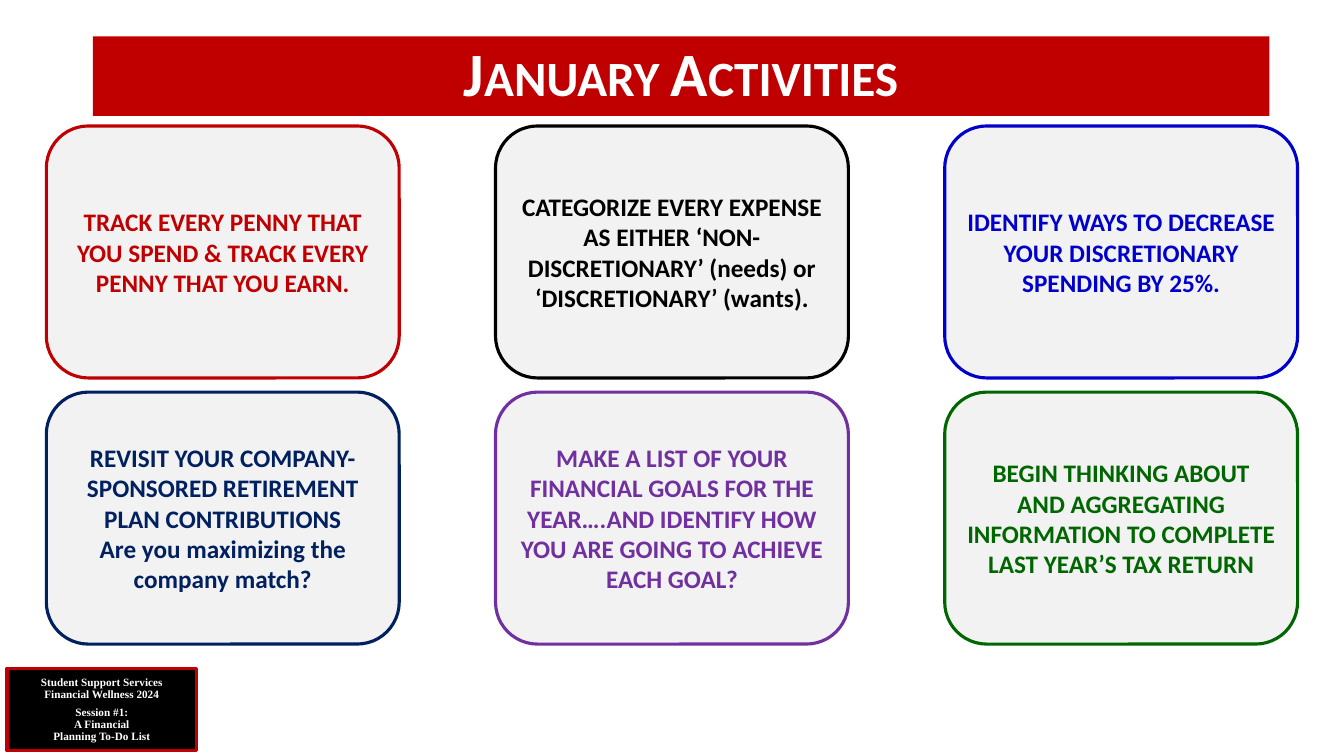
"""Build the January Activities slide: a banner, six activity cards and a session label."""
from dataclasses import dataclass

from pptx import Presentation
from pptx.dml.color import RGBColor
from pptx.enum.shapes import MSO_SHAPE
from pptx.enum.text import MSO_ANCHOR, MSO_AUTO_SIZE, PP_ALIGN
from pptx.shapes.autoshape import Shape
from pptx.slide import Slide
from pptx.text.text import _Paragraph
from pptx.util import Inches, Pt


@dataclass(frozen=True)
class Theme:
    red: str = "C00000"
    black: str = "000000"
    white: str = "FFFFFF"
    blue: str = "0000CC"
    navy: str = "002060"
    purple: str = "7030A0"
    green: str = "006600"
    card: str = "F2F2F2"
    body_font: str = "Calibri"
    label_font: str = "Times New Roman"
    title_size: float = 44
    card_size: float = 18
    label_size: float = 8
    border: float = 2.25


@dataclass(frozen=True)
class Activity:
    color: str
    paragraphs: tuple[str, ...]


THEME = Theme()
COLUMNS = 3
CARD_W, CARD_H = 3.5, 2.5
FIRST_LEFT, LAST_LEFT = 0.46, 9.37
FIRST_TOP, ROW_PITCH = 1.25, 2.64
COLUMN_PITCH = (LAST_LEFT - FIRST_LEFT) / (COLUMNS - 1)

ACTIVITIES = (
    Activity(THEME.red, ("TRACK EVERY PENNY THAT YOU SPEND & TRACK EVERY PENNY THAT YOU EARN.",)),
    Activity(THEME.black, ("CATEGORIZE EVERY EXPENSE AS EITHER ‘NON-DISCRETIONARY’ (needs) "
                           "or ‘DISCRETIONARY’ (wants).",)),
    Activity(THEME.blue, ("IDENTIFY WAYS TO DECREASE YOUR DISCRETIONARY SPENDING BY 25%.",)),
    Activity(THEME.navy, ("REVISIT YOUR COMPANY-SPONSORED RETIREMENT PLAN CONTRIBUTIONS",
                          "Are you maximizing the company match?")),
    Activity(THEME.purple, ("MAKE A LIST OF YOUR FINANCIAL GOALS FOR THE YEAR….AND IDENTIFY "
                            "HOW YOU ARE GOING TO ACHIEVE EACH GOAL?",)),
    Activity(THEME.green, ("BEGIN THINKING ABOUT AND AGGREGATING INFORMATION TO COMPLETE "
                           "LAST YEAR’S TAX RETURN",)),
)
LABEL = ("Student Support Services", "Financial Wellness 2024",
         "Session #1:\vA Financial\vPlanning To-Do List")


def format_paragraph(p: _Paragraph, font: str, size: float, color: str, spacing: float) -> None:
    p.alignment = PP_ALIGN.CENTER
    p.line_spacing = spacing
    p.font.name = font
    p.font.size = Pt(size)
    p.font.bold = True
    p.font.color.rgb = RGBColor.from_string(color)


def add_box(slide: Slide, kind: MSO_SHAPE, left: float, top: float, width: float, height: float,
            fill: str, line: str) -> Shape:
    sp = slide.shapes.add_shape(kind, Inches(left), Inches(top), Inches(width), Inches(height))
    sp.shadow.inherit = False
    sp.fill.solid()
    sp.fill.fore_color.rgb = RGBColor.from_string(fill)
    sp.line.color.rgb = RGBColor.from_string(line)
    sp.line.width = Pt(THEME.border)
    return sp


def write(sp: Shape, paragraphs: tuple[str, ...], font: str, size: float, color: str,
          spacing: float = 1.0) -> None:
    tf = sp.text_frame
    tf.word_wrap = True
    tf.vertical_anchor = MSO_ANCHOR.MIDDLE
    for i, text in enumerate(paragraphs):
        p = tf.paragraphs[0] if i == 0 else tf.add_paragraph()
        p.text = text
        format_paragraph(p, font, size, color, spacing)


def set_title(slide: Slide, text: str) -> None:
    title = slide.shapes.title
    title.left, title.top = Inches(0.92), Inches(0.36)
    title.width, title.height = Inches(11.67), Inches(0.79)
    title.fill.solid()
    title.fill.fore_color.rgb = RGBColor.from_string(THEME.red)
    write(title, (text,), THEME.body_font, THEME.title_size, THEME.white, 0.9)
    title.text_frame.auto_size = MSO_AUTO_SIZE.NONE
    r = title.text_frame.paragraphs[0].runs[0]
    r._r.get_or_add_rPr().set("cap", "small")


def add_label(slide: Slide) -> None:
    sp = add_box(slide, MSO_SHAPE.RECTANGLE, 0.07, 6.63, 1.88, 0.82, THEME.black, THEME.red)
    write(sp, LABEL, THEME.label_font, THEME.label_size, THEME.white, 0.9)
    sp.text_frame.paragraphs[-1].space_before = Pt(4)


def add_activity(slide: Slide, index: int, activity: Activity) -> None:
    row, column = divmod(index, COLUMNS)
    sp = add_box(slide, MSO_SHAPE.ROUNDED_RECTANGLE, FIRST_LEFT + column * COLUMN_PITCH,
                 FIRST_TOP + row * ROW_PITCH, CARD_W, CARD_H, THEME.card, activity.color)
    write(sp, activity.paragraphs, THEME.body_font, THEME.card_size, activity.color)


def main() -> None:
    prs = Presentation()
    prs.slide_width, prs.slide_height = Inches(13.33), Inches(7.5)
    slide = prs.slides.add_slide(prs.slide_layouts[5])
    set_title(slide, "January Activities")
    add_label(slide)
    for index, activity in enumerate(ACTIVITIES):
        add_activity(slide, index, activity)
    prs.save("out.pptx")


if __name__ == "__main__":
    main()
